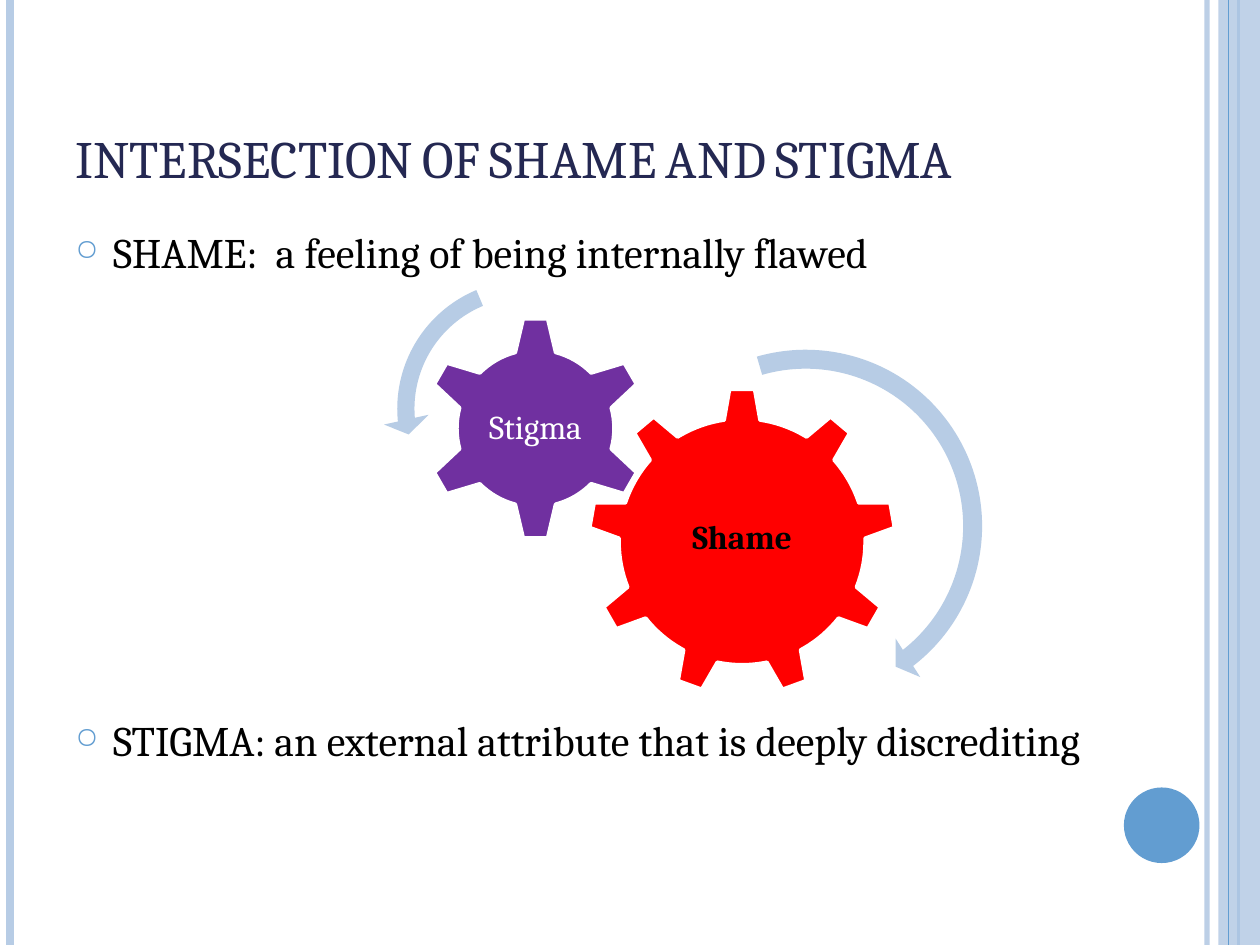
from lxml import etree
from pptx import Presentation, util as u
from pptx.dml.color import RGBColor
from pptx.enum import shapes, text
from pptx.oxml import ns

NAVY = RGBColor(0x24, 0x28, 0x52)
PALE = RGBColor(0xB7, 0xCC, 0xE5)
BLUE = RGBColor(0x62, 0x9D, 0xD1)
RED = RGBColor(0xFF, 0, 0)
PURPLE = RGBColor(0x70, 0x30, 0xA0)
BLACK = RGBColor(0, 0, 0)
WHITE = RGBColor(0xFF, 0xFF, 0xFF)
FONT = "Cambria"
COLS, ROWS = 100, 75
UNIT = u.Inches(10) // COLS
KIND = shapes.MSO_SHAPE


def grid(*cells):
    return [round(cell * UNIT) for cell in cells]


def within(box, x, y, w, h):
    return grid(box[0] + x, box[1] + y, w, h)


def child(node, tag, **attrs):
    return etree.SubElement(node, ns.qn(tag), **attrs)


def fade(shape, share):
    color = next(shape._element.spPr.iter(ns.qn("a:srgbClr")))
    child(color, "a:alpha", val=str(share * 1000))


def draw(slide, kind, place, color):
    shape = slide.shapes.add_shape(kind, *place)
    shape.shadow.inherit = False
    shape.fill.solid()
    shape.fill.fore_color.rgb = color
    shape.line.fill.background()
    return shape


def style(par, size, color, bold=False):
    for run in par.runs:
        font = run.font
        font.name, font.size, font.bold = FONT, u.Pt(size), bold
        font.color.rgb = color


def rule(slide, box, x, color, width):
    left, top, _, high = within(box, x, 0, 0, box[3])
    line = slide.shapes.add_connector(shapes.MSO_CONNECTOR.STRAIGHT, left, top, left, top + high)
    line.line.color.rgb = color
    line.line.width = u.Pt(width)
    child(line._element.spPr, "a:effectLst")
    return line


def frame(slide, box):
    fade(rule(slide, box, 95.8, PALE, 3), 93)
    rule(slide, box, 0.8, PALE, 4.5)
    rule(slide, box, 98.3, BLUE, 1.5)
    fade(draw(slide, KIND.RECTANGLE, within(box, 96.7, 0, 3.3, box[3]), PALE), 87)
    rule(slide, box, 97.5, BLUE, 0.75)
    draw(slide, KIND.OVAL, within(box, 89.2, 62.5, 6, 6), BLUE)


def title(slide, box):
    area = slide.shapes.add_textbox(*grid(*box)).text_frame
    area.word_wrap = True
    area.vertical_anchor = text.MSO_ANCHOR.BOTTOM
    area.text = "INTERSECTION OF SHAME AND STIGMA"
    par = area.paragraphs[0]
    style(par, 30, NAVY)
    par.runs[0].font._element.set("cap", "small")


def bullet(par):
    props = par._p.get_or_add_pPr()
    props.set("marL", str(u.Inches(0.3)))
    props.set("indent", str(-u.Inches(0.3)))
    child(child(props, "a:buClr"), "a:srgbClr", val=str(BLUE))
    child(props, "a:buSzPct", val="70000")
    child(props, "a:buChar", char="○")


def body(slide, box, items):
    area = slide.shapes.add_textbox(*grid(*box)).text_frame
    area.word_wrap = True
    area.text = "\n".join(line for line, _ in items)
    for par, (_, gap) in zip(area.paragraphs, items):
        par.space_before = u.Pt(gap)
        bullet(par)
        style(par, 24, BLACK)


def gear(slide, kind, place, fill, label, color, bold):
    shape = draw(slide, kind, place, fill)
    shape.line.color.rgb = WHITE
    shape.line.width = u.Pt(2)
    area = shape.text_frame
    area.margin_left = area.margin_right = u.Inches(0.03)
    area.margin_top = area.margin_bottom = u.Inches(0.03)
    area.vertical_anchor = text.MSO_ANCHOR.MIDDLE
    area.text = label
    par = area.paragraphs[0]
    par.alignment = text.PP_ALIGN.CENTER
    par.line_spacing = 0.9
    style(par, 19, color, bold)


def arrow(slide, kind, place, turns):
    shape = draw(slide, kind, place, PALE)
    for i, turn in enumerate(turns):
        shape.adjustments[i] = turn


def gears(slide, box):
    gear(slide, KIND.GEAR_9, within(box, 16.7, 9.8, 24.4, 24.4), RED, "Shame", BLACK, True)
    gear(slide, KIND.GEAR_6, within(box, 3.6, 4.1, 17.8, 17.8), PURPLE, "Stigma", WHITE, False)
    arrow(slide, KIND.CIRCULAR_ARROW, within(box, 18.9, 5.7, 30.1, 30.1),
          (0.05, 3.13, 31.33, 152.34, 0.06))
    arrow(slide, KIND.LEFT_CIRCULAR_ARROW, within(box, 0.4, 0.1, 22.7, 22.7),
          (0.06, 4.3, 104.89, 148.38, 0.08))


def main():
    deck = Presentation()
    deck.slide_width, deck.slide_height = grid(COLS, ROWS)
    slide = deck.slides.add_slide(deck.slide_layouts[6])
    frame(slide, (0, 0, COLS, ROWS))
    title(slide, (5, 3, 81.7, 12.5))
    body(slide, (5, 17.5, 81.7, 53.3), (
        ("SHAME:  a feeling of being internally flawed", 6),
        ("STIGMA: an external attribute that is deeply discrediting", 250),
    ))
    gears(slide, (30, 21, 49, 36))
    deck.save("out.pptx")


if __name__ == "__main__":
    main()
